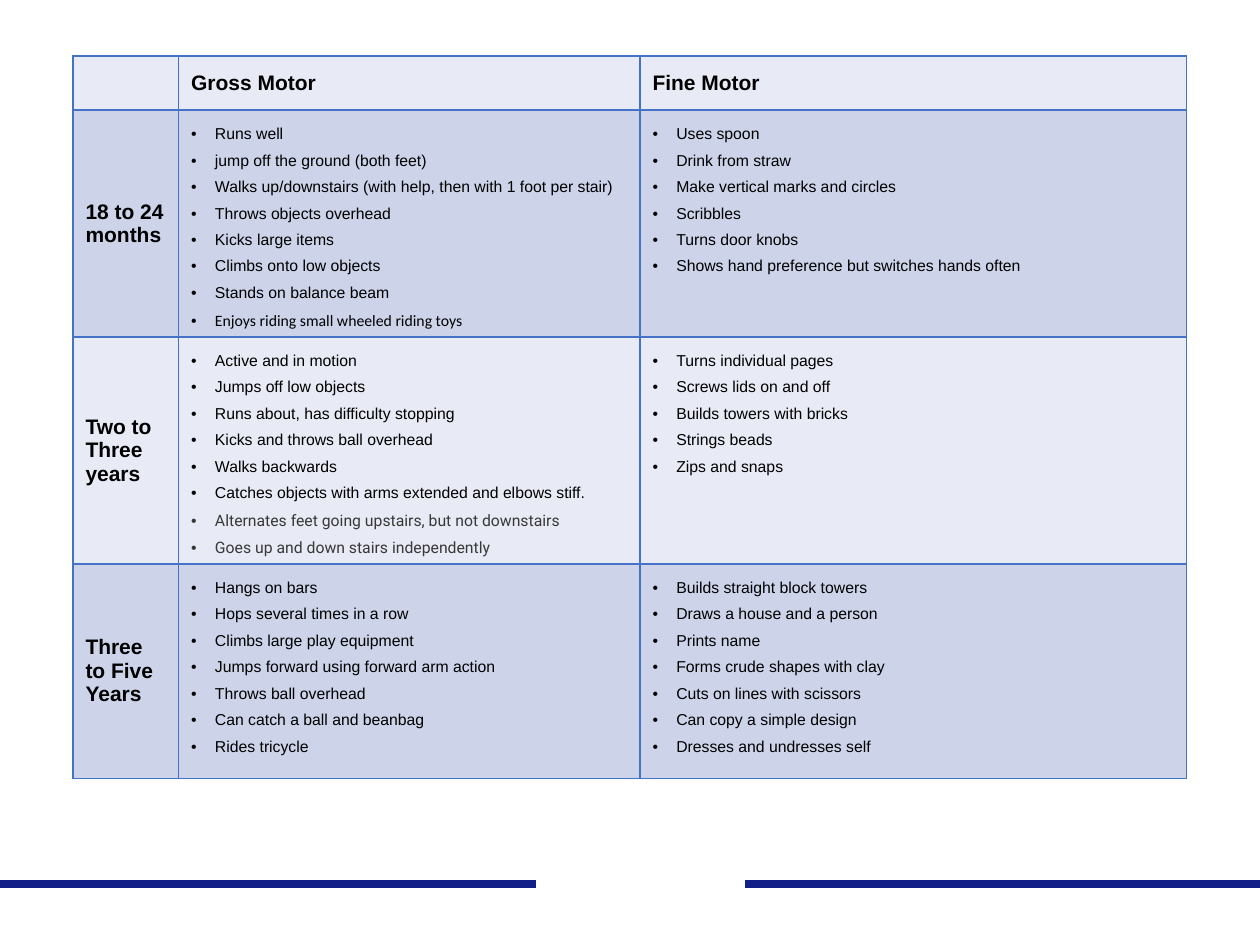
from lxml.etree import SubElement
from pptx import Presentation
from pptx.dml.color import RGBColor
from pptx.enum.shapes import MSO_CONNECTOR
from pptx.enum.text import MSO_ANCHOR
from pptx.oxml import parse_xml
from pptx.oxml.ns import nsdecls, qn
from pptx.util import Cm, Pt

HEADS = ["", "Gross Motor", "Fine Motor"]
AGES = [
    ("18 to 24 months",
     ["Runs well", "jump off the ground (both feet)",
      "Walks up/downstairs (with help, then with 1 foot per stair)",
      "Throws objects overhead", "Kicks large items",
      "Climbs onto low objects", "Stands on balance beam",
      "Enjoys riding small wheeled riding toys"],
     ["Uses spoon", "Drink from straw", "Make vertical marks and circles",
      "Scribbles", "Turns door knobs",
      "Shows hand preference but switches hands often"]),
    ("Two to Three years",
     ["Active and in motion", "Jumps off low objects",
      "Runs about, has difficulty stopping",
      "Kicks and throws ball overhead", "Walks backwards",
      "Catches objects with arms extended and elbows stiff.",
      "Alternates feet going upstairs, but not downstairs",
      "Goes up and down stairs independently"],
     ["Turns individual pages", "Screws lids on and off",
      "Builds towers with bricks", "Strings beads", "Zips and snaps"]),
    ("Three to Five Years",
     ["Hangs on bars", "Hops several times in a row",
      "Climbs large play equipment",
      "Jumps forward using forward arm action", "Throws ball overhead",
      "Can catch a ball and beanbag", "Rides tricycle"],
     ["Builds straight block towers", "Draws a house and a person",
      "Prints name", "Forms crude shapes with clay",
      "Cuts on lines with scissors", "Can copy a simple design",
      "Dresses and undresses self"]),
]
HEAD = {"name": "Arial", "size": Pt(12), "bold": True}
ITEM = {"name": "Arial", "size": Pt(9), "bold": False}
BLACK, GREY, EDGE = "000000", "383838", "4472C4"
BANDS = ["E8EBF5", "CDD4EA"]
ODD = {  # items with their own font and colour
    "Enjoys riding small wheeled riding toys": ("Calibri", BLACK),
    "Alternates feet going upstairs, but not downstairs": ("Roboto", GREY),
    "Goes up and down stairs independently": ("Roboto", GREY),
}
WIDTHS = [2.13, 9.3, 11.02]
HEIGHTS = [1.09, 4.57, 4.57, 4.32]
RULES = [(0, 25.4, "121F88"), (10.8, 15.01, "FFFFFF")]
RULE_Y = 17.83


def tint(color, code):
    color.rgb = RGBColor.from_string(code)


def write(para, text, style, code=BLACK):
    run = para.add_run()
    run.text = text
    for key, value in style.items():
        setattr(run.font, key, value)
    tint(run.font.color, code)


def bullet(para, code):
    props = para._p.get_or_add_pPr()
    props.set("marL", str(Cm(0.48)))
    props.set("indent", str(-Cm(0.48)))
    color = SubElement(props, qn("a:buClr"))
    SubElement(color, qn("a:srgbClr"), val=code)
    SubElement(props, qn("a:buFont"), typeface="Arial")
    SubElement(props, qn("a:buChar"), char="•")
    para.line_spacing = 1.5


def frame(cell):
    """Draw the four borders, which must come before the fill."""
    props = cell._tc.get_or_add_tcPr()
    for spot, side in enumerate("LRTB"):
        props.insert(spot, parse_xml(
            f'<a:ln{side} {nsdecls("a")} w="{Pt(1)}"><a:solidFill>'
            f'<a:srgbClr val="{EDGE}"/></a:solidFill></a:ln{side}>'))


def fill_cell(cell, content, band):
    cell.fill.solid()
    tint(cell.fill.fore_color, band)
    frame(cell)
    text = cell.text_frame
    if isinstance(content, str):
        cell.vertical_anchor = MSO_ANCHOR.MIDDLE
        if content:
            write(text.paragraphs[0], content, HEAD)
        return
    for i, item in enumerate(content):
        para = text.add_paragraph() if i else text.paragraphs[0]
        font, code = ODD.get(item, ("Arial", BLACK))
        bullet(para, code)
        write(para, item, {**ITEM, "name": font}, code)


def add_rule(slide, start, end, code):
    rule = slide.shapes.add_connector(
        MSO_CONNECTOR.STRAIGHT, Cm(start), Cm(RULE_Y), Cm(end), Cm(RULE_Y))
    rule.line.width = Pt(4.5)
    tint(rule.line.color, code)
    SubElement(rule._element.spPr, qn("a:effectLst"))


def add_chart_of_skills(slide):
    rows = [HEADS, *AGES]
    table = slide.shapes.add_table(
        len(rows), len(HEADS), Cm(1.47), Cm(1.13),
        Cm(sum(WIDTHS)), Cm(sum(HEIGHTS))).table
    table.first_row = table.horz_banding = False
    for column, width in zip(table.columns, WIDTHS):
        column.width = Cm(width)
    for r, (row, height) in enumerate(zip(rows, HEIGHTS)):
        table.rows[r].height = Cm(height)
        for c, content in enumerate(row):
            fill_cell(table.cell(r, c), content, BANDS[r % 2])


def main():
    deck = Presentation()
    deck.slide_width, deck.slide_height = Cm(25.4), Cm(19.05)
    slide = deck.slides.add_slide(deck.slide_layouts[6])
    for rule in RULES:
        add_rule(slide, *rule)
    add_chart_of_skills(slide)
    deck.save("out.pptx")


if __name__ == "__main__":
    main()
